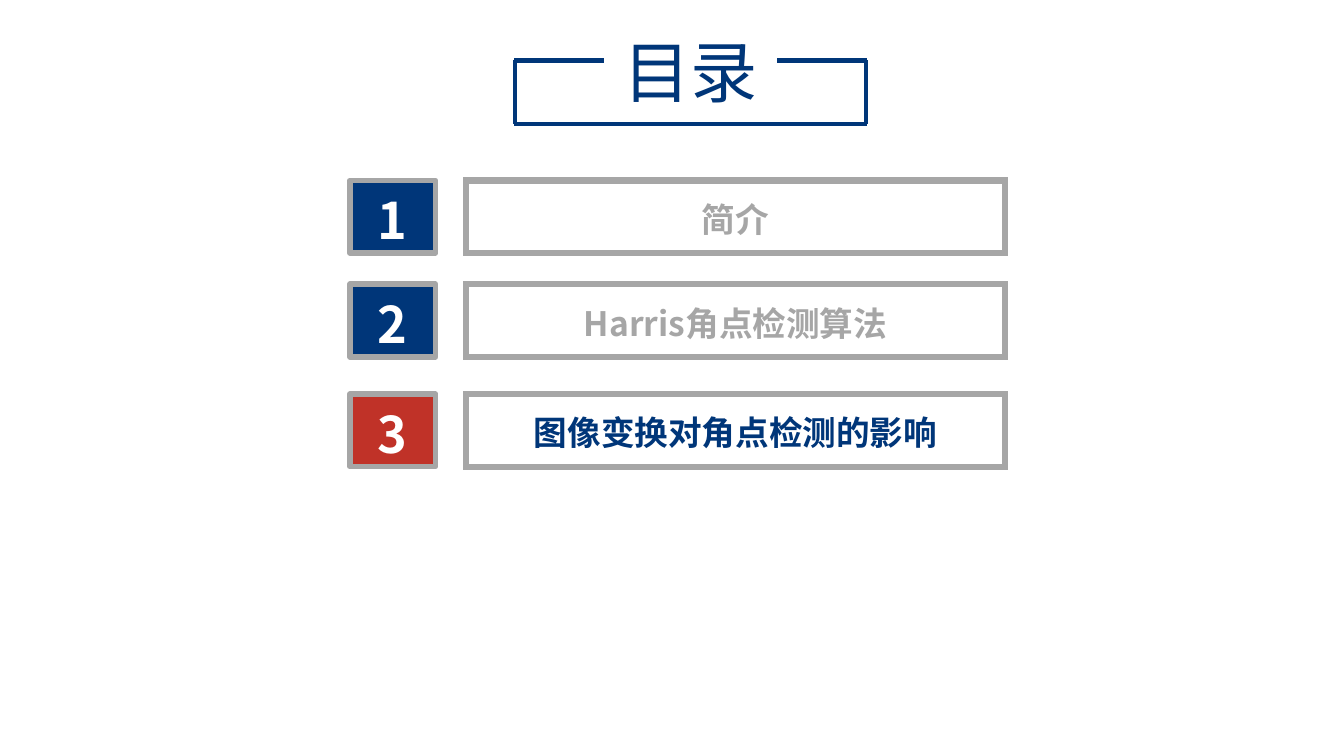
from pptx import Presentation
from pptx import util as u
from pptx.dml.color import RGBColor
from pptx.enum import shapes, text
from pptx.oxml.ns import qn
from lxml import etree

# Content: number, label, top, number fill, label colour
TITLE = "目录"
ITEMS = [
    ("1", "简介", 179, "blue", "grey"),
    ("2", "Harris角点检测算法", 282, "blue", "grey"),
    ("3", "图像变换对角点检测的影响", 391, "red", "blue"),
]

# Theme
THEME = {
    "font": "Noto Sans CJK SC",
    "blue": RGBColor.from_string("003679"),
    "red": RGBColor.from_string("C03228"),
    "grey": RGBColor.from_string("A6A6A6"),
    "white": RGBColor.from_string("FFFFFF"),
    "title": 48, "number": 36, "label": 24,
    "rule": 3, "badge": 4, "frame": 4.5,
}

# Layout in px, 100 to the inch
PX = 9144
NUM_X, NUM_W = 347, 85
BAR_X, BAR_W = 462, 535
ROW_H = 72
HEAD = (583, 25, 204, 91)
LEFT, RIGHT, TOP, LOW = 511, 859, 60, 123
ARM, OVER = 88, 1
RULES = [
    (LEFT - OVER, TOP, LEFT + ARM, TOP),
    (RIGHT - ARM, TOP, RIGHT + OVER, TOP),
    (LEFT - OVER, LOW, RIGHT + OVER, LOW),
    (LEFT, TOP, LEFT, LOW),
    (RIGHT, TOP, RIGHT, LOW),
]


def emu(*vals):
    return [v * PX for v in vals]


def write(shape, words, size, color, bold, space):
    frame = shape.text_frame
    frame.text = words
    para = frame.paragraphs[0]
    run = para.runs[0]
    formats = [
        (frame, {"word_wrap": True, "auto_size": text.MSO_AUTO_SIZE.NONE,
                 "vertical_anchor": text.MSO_ANCHOR.MIDDLE}),
        (para, {"alignment": text.PP_ALIGN.CENTER, "line_spacing": space}),
        (run.font, {"name": THEME["font"], "size": u.Pt(THEME[size]), "bold": bold}),
    ]
    for part, vals in formats:
        for key, val in vals.items():
            setattr(part, key, val)
    run.font.color.rgb = THEME[color]
    # East Asian typeface follows the Latin one
    latin = run.font._element.find(qn("a:latin"))
    east = etree.Element(qn("a:ea"), typeface=THEME["font"])
    latin.addnext(east)


def stroke(shape, color, width):
    shape.line.color.rgb = THEME[color]
    shape.line.width = u.Pt(THEME[width])


def box(slide, x, y, w, fill, width):
    shape = slide.shapes.add_shape(shapes.MSO_SHAPE.RECTANGLE, *emu(x, y, w, ROW_H))
    shape.shadow.inherit = False
    if fill:
        shape.fill.solid()
        shape.fill.fore_color.rgb = THEME[fill]
    else:
        shape.fill.background()
    stroke(shape, "grey", width)
    return shape


def main():
    deck = Presentation()
    deck.slide_width, deck.slide_height = emu(1333, 750)
    slide = deck.slides.add_slide(deck.slide_layouts[5])

    # Title
    title = slide.shapes.title
    for key, val in zip(("left", "top", "width", "height"), emu(*HEAD)):
        setattr(title, key, val)
    write(title, TITLE, "title", "blue", False, 1.0)

    # Open frame around the title
    for ends in RULES:
        rule = slide.shapes.add_connector(shapes.MSO_CONNECTOR.STRAIGHT, *emu(*ends))
        stroke(rule, "blue", "rule")
        etree.SubElement(rule._element.spPr, qn("a:effectLst"))

    # Agenda rows
    for num, label, y, fill, color in ITEMS:
        badge = box(slide, NUM_X, y, NUM_W, fill, "badge")
        write(badge, num, "number", "white", True, 1.1)
        bar = box(slide, BAR_X, y, BAR_W, None, "frame")
        etree.SubElement(bar.line._get_or_add_ln(), qn("a:miter"), lim="800000")
        write(bar, label, "label", color, True, 1.1)

    deck.save("out.pptx")


if __name__ == "__main__":
    main()
